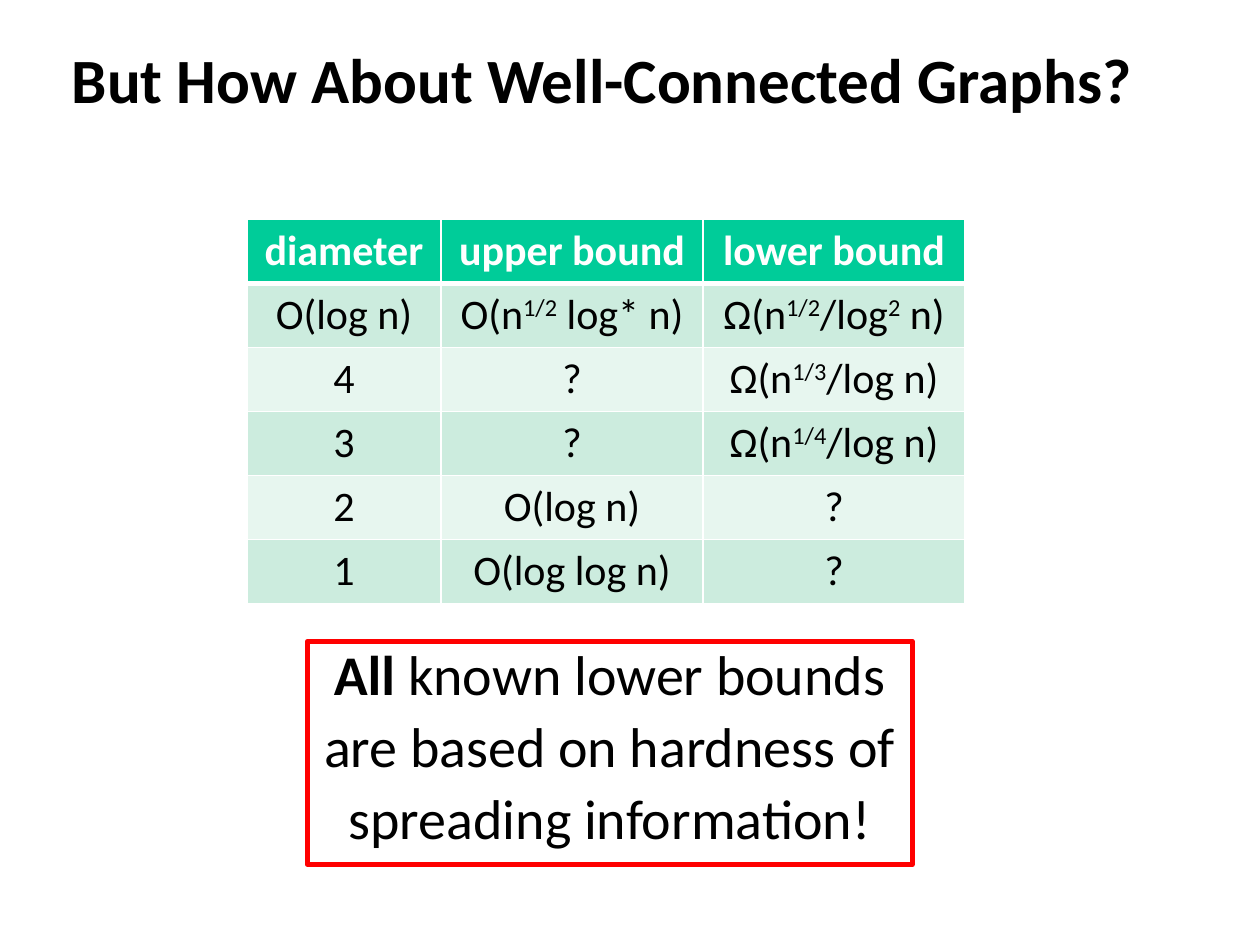
from lxml import etree
from pptx import Presentation
from pptx.dml.color import RGBColor
from pptx.enum.shapes import MSO_SHAPE
from pptx.enum.text import MSO_ANCHOR, PP_ALIGN
from pptx.oxml.ns import qn
from pptx.util import Inches, Pt

RECTANGLE = MSO_SHAPE.RECTANGLE
LEFT, CENTER = PP_ALIGN.LEFT, PP_ALIGN.CENTER
TOP, MIDDLE = MSO_ANCHOR.TOP, MSO_ANCHOR.MIDDLE
TITLE_ONLY = 5
WIDTH, HEIGHT = 10, 7.5

BLACK, WHITE, RED = "000000", "FFFFFF", "FF0000"
HEADER_FILL = "00CC99"
BAND_FILLS = ["CCECDE", "E7F6EF"]

# Text between carets is superscript
BOUNDS = [
    ["diameter", "upper bound", "lower bound"],
    ["O(log n)", "O(n^1/2^ log* n)", "Ω(n^1/2^/log^2^ n)"],
    ["4", "?", "Ω(n^1/3^/log n)"],
    ["3", "?", "Ω(n^1/4^/log n)"],
    ["2", "O(log n)", "?"],
    ["1", "O(log log n)", "?"],
]


def color(value):
    return RGBColor.from_string(value)


class SlideWriter:
    """Holds the text style and the current slide; lengths are shares of its size."""

    font = "Calibri"

    def __init__(self, deck):
        self.deck = deck
        self.slide = deck.slides.add_slide(deck.slide_layouts[TITLE_ONLY])

    def across(self, share):
        return round(self.deck.slide_width * share)

    def down(self, share):
        return round(self.deck.slide_height * share)

    def area(self, left, top, width, height):
        return self.across(left), self.down(top), self.across(width), self.down(height)

    def span(self, para, text, size, ink=BLACK, bold=False, raised=False):
        span = para.add_run()
        span.text = text
        span.font.name = self.font
        span.font.size = Pt(size)
        span.font.bold = bold
        span.font.color.rgb = color(ink)
        if raised:
            span.font._element.set("baseline", "30000")

    def title(self, text, area):
        box = self.slide.shapes.title
        box.left, box.top, box.width, box.height = self.area(*area)
        box.text_frame.vertical_anchor = MIDDLE
        para = box.text_frame.paragraphs[0]
        para.alignment = LEFT
        self.span(para, text, 36, bold=True)

    def border(self, cell, widths):
        properties = cell._tc.get_or_add_tcPr()
        for position, (side, points) in enumerate(widths.items()):
            line = etree.Element(qn(f"a:ln{side}"), w=str(Pt(points)))
            fill = etree.SubElement(line, qn("a:solidFill"))
            etree.SubElement(fill, qn("a:srgbClr"), val=WHITE)
            properties.insert(position, line)

    def table(self, rows, area, column_shares):
        frame = self.slide.shapes.add_table(len(rows), len(rows[0]), *self.area(*area))
        table = frame.table
        for column, share in zip(table.columns, column_shares):
            column.width = self.across(share)
        for r, row in enumerate(rows):
            header = r == 0
            for c, text in enumerate(row):
                cell = table.cell(r, c)
                cell.fill.solid()
                cell.fill.fore_color.rgb = color(
                    HEADER_FILL if header else BAND_FILLS[(r - 1) % 2])
                self.border(cell, {"L": 1, "R": 1, "T": 3 if r == 1 else 1,
                                   "B": 3 if header else 1})
                para = cell.text_frame.paragraphs[0]
                para.alignment = CENTER
                for i, part in enumerate(text.split("^")):
                    self.span(para, part, 24, WHITE if header else BLACK,
                              bold=header, raised=i % 2 == 1)

    def callout(self, lines, area):
        box = self.slide.shapes.add_shape(RECTANGLE, *self.area(*area))
        box.shadow.inherit = False
        box.fill.background()
        box.line.color.rgb = color(RED)
        box.line.width = Pt(3)
        frame = box.text_frame
        frame.word_wrap = True
        frame.vertical_anchor = TOP
        for i, spans in enumerate(lines):
            para = frame.add_paragraph() if i else frame.paragraphs[0]
            para.alignment = CENTER
            para.line_spacing = 0.9
            para.space_before = Pt(6.4)
            for text, bold in spans:
                self.span(para, text, 32, bold=bold)


def main():
    deck = Presentation()
    deck.slide_width, deck.slide_height = Inches(WIDTH), Inches(HEIGHT)
    writer = SlideWriter(deck)

    # Heading
    writer.title("But How About Well-Connected Graphs?",
                 (0.47 / WIDTH, 0.25 / HEIGHT, 9.19 / WIDTH, 0.75 / HEIGHT))

    # Known bounds by diameter
    writer.table(BOUNDS, (1.96 / WIDTH, 1.74 / HEIGHT, 5.7 / WIDTH, 3.05 / HEIGHT),
                 [1.54 / WIDTH, 2.08 / WIDTH, 2.08 / WIDTH])

    # Conclusion
    writer.callout([[("All", True), (" known lower bounds", False)],
                    [("are based on hardness of", False)],
                    [("spreading information!", False)]],
                   (2.44 / WIDTH, 5.09 / HEIGHT, 4.8 / WIDTH, 1.77 / HEIGHT))

    deck.save("out.pptx")


if __name__ == "__main__":
    main()
